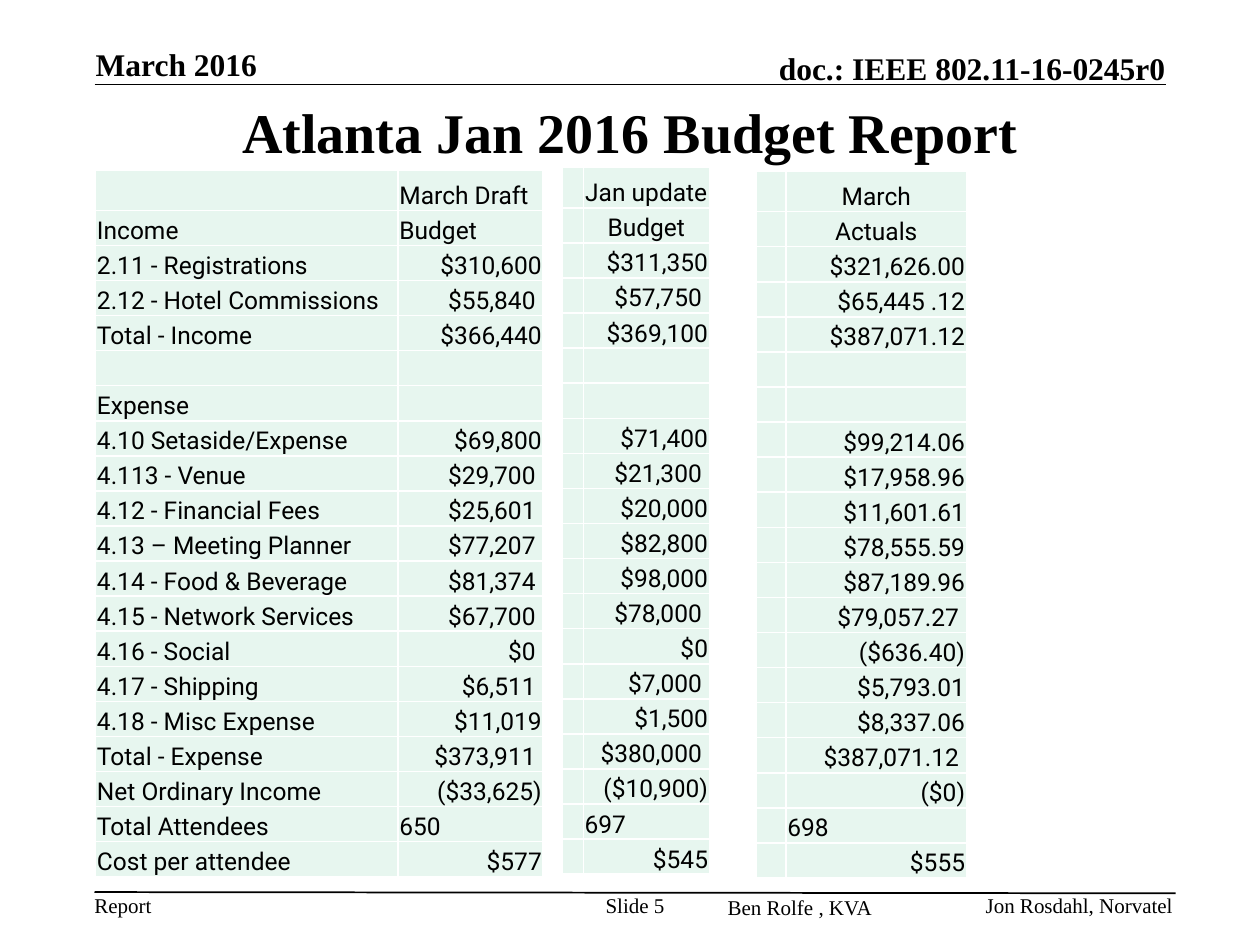
from lxml import etree
from pptx import Presentation
from pptx.dml.color import RGBColor
from pptx.enum.shapes import MSO_CONNECTOR
from pptx.enum.text import MSO_ANCHOR, PP_ALIGN
from pptx.oxml.ns import qn
from pptx.util import Inches, Pt

LEFT, CENTER, RIGHT = PP_ALIGN.LEFT, PP_ALIGN.CENTER, PP_ALIGN.RIGHT
TOP, MIDDLE, BOTTOM = MSO_ANCHOR.TOP, MSO_ANCHOR.MIDDLE, MSO_ANCHOR.BOTTOM
STRAIGHT = MSO_CONNECTOR.STRAIGHT

COLORS = {"text": "000000", "line": "000000", "cell": "E7F6EF", "border": "FFFFFF"}
SERIF, SANS = "Times New Roman", "Roboto"

TABLE_HEIGHT, HEADER_HEIGHT = 5.61, 0.32
HEADER_ROWS = 2
ATTENDEES_ROW = 18

LABELS = [
    "", "Income", "2.11 - Registrations", "2.12 - Hotel Commissions", "Total - Income",
    "", "Expense", "4.10 Setaside/Expense", "4.113 - Venue", "4.12 - Financial Fees",
    "4.13 – Meeting Planner", "4.14 - Food & Beverage", "4.15 - Network Services",
    "4.16 - Social", "4.17 - Shipping", "4.18 - Misc Expense", "Total - Expense",
    "Net Ordinary Income", "Total Attendees", "Cost per attendee",
]
DRAFT = [
    "March Draft", "Budget", "$310,600", "$55,840 ", "$366,440", "", "",
    "$69,800", "$29,700 ", "$25,601 ", "$77,207 ", "$81,374 ", "$67,700 ", "$0 ",
    "$6,511 ", "$11,019", "$373,911 ", "($33,625)", "650", "$577",
]
UPDATE = [
    "Jan update", "Budget", "$311,350", "$57,750 ", "$369,100", "", "",
    "$71,400", "$21,300 ", "$20,000", "$82,800", "$98,000", "$78,000 ", "$0",
    "$7,000 ", "$1,500", "$380,000 ", "($10,900)", "697", "$545",
]
ACTUALS = [
    "March", "Actuals", "$321,626.00", "$65,445 .12", "$387,071.12", "", "",
    "$99,214.06", "$17,958.96", "$11,601.61", "$78,555.59", "$87,189.96",
    "$79,057.27 ", "($636.40)", "$5,793.01", "$8,337.06", "$387,071.12 ",
    "($0)", "698", "$555",
]
BLANK = [""] * len(LABELS)


def rgb(name):
    return RGBColor.from_string(COLORS[name])


def format_runs(p, font, size, bold=False):
    for r in p.runs:
        r.font.name = font
        r.font.size = Pt(size)
        r.font.bold = bold
        r.font.color.rgb = rgb("text")


def add_rule(slide, x1, y1, x2, y2):
    line = slide.shapes.add_connector(
        STRAIGHT, Inches(x1), Inches(y1), Inches(x2), Inches(y2))
    line.line.color.rgb = rgb("line")
    line.line.width = Pt(1)
    etree.SubElement(line._element.spPr, qn("a:effectLst"))


def add_text(slide, text, box, size=12, bold=False, align=LEFT, anchor=TOP, wrap=True):
    sp = slide.shapes.add_textbox(*map(Inches, box))
    tf = sp.text_frame
    tf.margin_left = tf.margin_top = tf.margin_right = tf.margin_bottom = 0
    tf.word_wrap = wrap
    tf.vertical_anchor = anchor
    tf.text = text
    p = tf.paragraphs[0]
    p.alignment = align
    format_runs(p, SERIF, size, bold)


def set_title(slide, text):
    sp = slide.shapes.title
    sp.left, sp.top, sp.width, sp.height = map(Inches, (0.75, 0.75, 8.5, 0.58))
    tf = sp.text_frame
    tf.vertical_anchor = MIDDLE
    tf.text = text
    p = tf.paragraphs[0]
    p.alignment = CENTER
    format_runs(p, SERIF, 32, True)


def add_borders(cell):
    tc_pr = cell._tc.get_or_add_tcPr()
    for i, side in enumerate(("lnL", "lnR", "lnT", "lnB")):
        ln = etree.Element(qn("a:" + side), w=str(Pt(1)))
        fill = etree.SubElement(ln, qn("a:solidFill"))
        etree.SubElement(fill, qn("a:srgbClr"), val=COLORS["border"])
        tc_pr.insert(i, ln)


def fill_cell(cell, text, align):
    cell.fill.solid()
    cell.fill.fore_color.rgb = rgb("cell")
    add_borders(cell)
    cell.margin_left = cell.margin_top = cell.margin_right = Inches(0.01)
    cell.margin_bottom = 0
    cell.vertical_anchor = BOTTOM
    p = cell.text_frame.paragraphs[0]
    if text:
        p.text = text
        p.alignment = align
        format_runs(p, SANS, 14)
    else:
        etree.SubElement(p._p, qn("a:endParaRPr"), sz="1400")


def value_align(row, header_align):
    if row < HEADER_ROWS:
        return header_align
    return LEFT if row == ATTENDEES_ROW else RIGHT


def add_budget_table(slide, left, top, widths, labels, values, header_align):
    rows = len(labels)
    frame = slide.shapes.add_table(
        rows, 2, Inches(left), Inches(top), Inches(sum(widths)), Inches(TABLE_HEIGHT))
    table = frame.table
    table.first_row = table.horz_banding = False
    for column, width in zip(table.columns, widths):
        column.width = Inches(width)
    row_height = (TABLE_HEIGHT - HEADER_HEIGHT) / (rows - 1)
    for i, (label, value) in enumerate(zip(labels, values)):
        table.rows[i].height = Inches(row_height if i else HEADER_HEIGHT)
        fill_cell(table.cell(i, 0), label, LEFT)
        fill_cell(table.cell(i, 1), value, value_align(i, header_align))


def main():
    prs = Presentation()
    prs.slide_width, prs.slide_height = Inches(10), Inches(7.5)
    slide = prs.slides.add_slide(prs.slide_layouts[5])

    add_rule(slide, 0.75, 0.67, 9.25, 0.67)
    add_rule(slide, 0.75, 7.08, 9.33, 7.09)
    set_title(slide, "Atlanta Jan 2016 Budget Report")
    add_text(slide, "March 2016", (0.76, 0.36, 2.05, 0.3), 18, True, anchor=BOTTOM)
    add_text(slide, "doc.: IEEE 802.11-16-0245r0", (3.92, 0.39, 5.33, 0.3), 18, True,
             RIGHT, BOTTOM)
    add_text(slide, "Report", (0.75, 7.08, 0.46, 0.2), wrap=False)
    add_text(slide, "Slide 5", (4.75, 7.08, 0.58, 0.4), align=CENTER)
    add_text(slide, "Ben Rolfe , KVA", (5.67, 7.1, 1.25, 0.2), align=RIGHT)
    add_text(slide, "Jon Rosdahl, Norvatel ", (7.17, 7.08, 2.18, 0.26), align=RIGHT)

    add_budget_table(slide, 0.76, 1.35, (2.4, 1.15), LABELS, DRAFT, LEFT)
    add_budget_table(slide, 4.46, 1.33, (0.17, 1), BLANK, UPDATE, CENTER)
    add_budget_table(slide, 6, 1.36, (0.24, 1.43), BLANK, ACTUALS, CENTER)

    prs.save("out.pptx")


if __name__ == "__main__":
    main()
